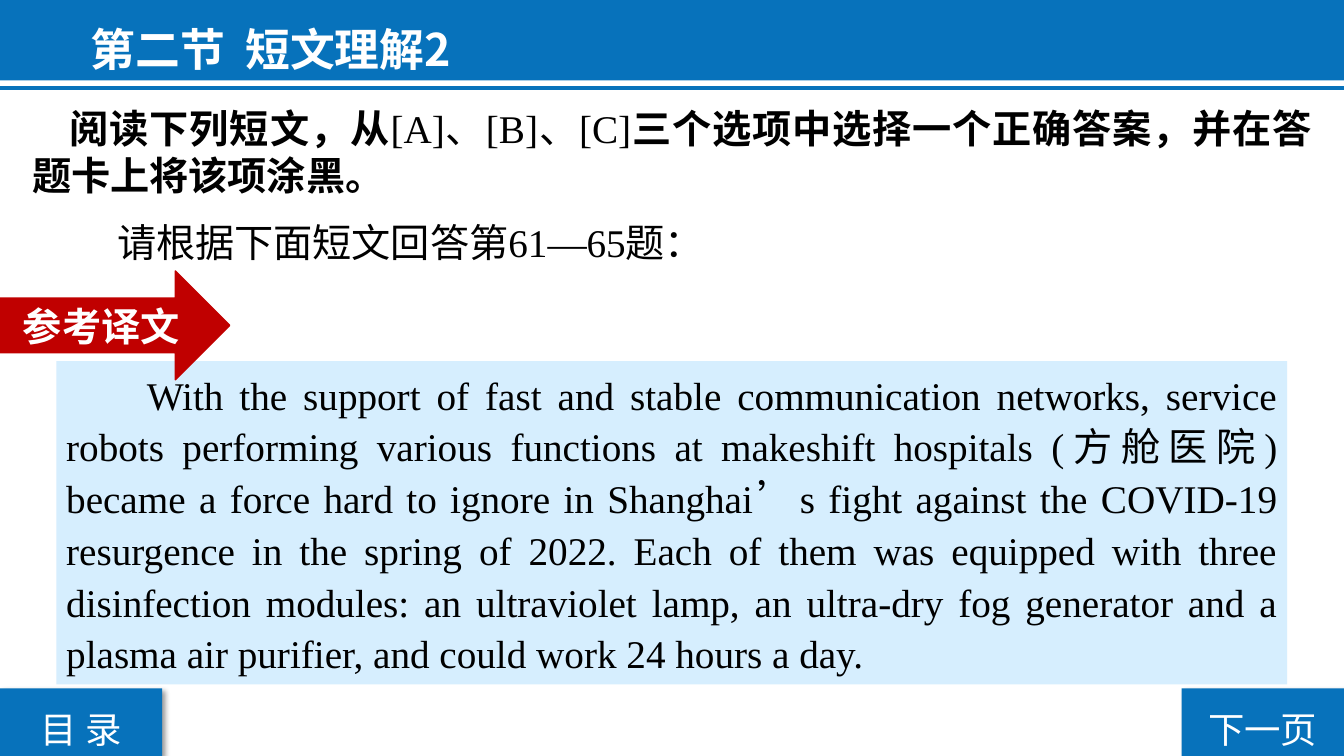
"""Builds the reading comprehension slide with its passage and navigation buttons."""
from dataclasses import dataclass

from lxml.etree import SubElement
from pptx import Presentation
from pptx.dml.color import RGBColor
from pptx.enum.shapes import MSO_CONNECTOR as Connector, MSO_SHAPE as Preset
from pptx.enum.text import MSO_ANCHOR as Anchor, PP_ALIGN as Align
from pptx.oxml.ns import qn
from pptx.util import Cm, Pt


@dataclass(frozen=True)
class Theme:
    blue: RGBColor = RGBColor(0x07, 0x72, 0xBB)
    pale: RGBColor = RGBColor(0xD6, 0xEE, 0xFE)
    red: RGBColor = RGBColor(0xC0, 0x00, 0x00)
    white: RGBColor = RGBColor(0xFF, 0xFF, 0xFF)
    black: RGBColor = RGBColor(0x00, 0x00, 0x00)
    title_size: Pt = Pt(32)
    text_size: Pt = Pt(28)
    button_size: Pt = Pt(26)
    chinese: str = "Noto Sans CJK SC"
    latin: str = "Times New Roman"


theme = Theme()


def write(box, spans, size, color, align=Align.JUSTIFY, spacing=1.0, indent=0, anchor=Anchor.TOP):
    """Fill a box with one paragraph of (text, font, bold) spans."""
    frame = box.text_frame
    frame.word_wrap = True
    frame.vertical_anchor = anchor
    frame.margin_left = frame.margin_right = Cm(0.25)
    frame.margin_top = frame.margin_bottom = Cm(0.13)
    para = frame.paragraphs[0]
    para.alignment = align
    para.line_spacing = spacing
    para.space_before = Pt(0)
    para._p.get_or_add_pPr().set("indent", str(Cm(indent)))
    for text, font, bold in spans:
        span = para.add_run()
        span.text = text
        span.font.name = font
        span.font.size = size
        span.font.bold = bold
        span.font.color.rgb = color
        SubElement(span._r.get_or_add_rPr(), qn("a:ea"), typeface=theme.chinese)


def add_block(preset, left, top, width, height, color):
    """Add a plain filled shape without outline or shadow."""
    block = page.shapes.add_shape(preset, Cm(left), Cm(top), Cm(width), Cm(height))
    block.fill.solid()
    block.fill.fore_color.rgb = color
    block.line.fill.background()
    block.shadow.inherit = False
    return block


deck = Presentation()
deck.slide_width, deck.slide_height = Cm(33.87), Cm(19.05)
page = deck.slides.add_slide(deck.slide_layouts[5])

band = add_block(Preset.RECTANGLE, 0, 0, 33.87, 2.03, theme.blue)
rule = page.shapes.add_connector(Connector.STRAIGHT, 0, Cm(2.21), Cm(33.87), Cm(2.21))
rule.line.color.rgb = theme.blue
rule.line.width = Pt(3)
SubElement(rule._element.spPr, qn("a:effectLst"))

title = page.shapes.title
title.left, title.top, title.width, title.height = Cm(2.03), Cm(0), Cm(23.16), Cm(2.03)
write(title, [("第二节  短文理解2", theme.chinese, True)], theme.title_size, theme.white,
      Align.LEFT, 1.3, anchor=Anchor.MIDDLE)
rule._element.addnext(title._element)

for label, left in (("目 录", 0), ("下一页", 29.78)):
    button = add_block(Preset.RECTANGLE, left, 17.35, 4.09, 1.7, theme.blue)
    write(button, [(label, theme.chinese, False)], theme.button_size, theme.white,
          Align.CENTER, 1.3, anchor=Anchor.MIDDLE)
    effects = button._element.spPr.find(qn("a:effectLst"))
    shadow = SubElement(effects, qn("a:outerShdw"), blurRad=str(Pt(4)), dist=str(Pt(3)),
                        dir="2700000", algn="tl", rotWithShape="0")
    shade = SubElement(shadow, qn("a:srgbClr"), val=str(theme.black))
    SubElement(shade, qn("a:alpha"), val="40000")

passage = add_block(Preset.RECTANGLE, 1.42, 9.1, 31.02, 8.15, theme.pale)
story = (
    "With the support of fast and stable communication networks, service robots performing "
    "various functions at makeshift hospitals (方舱医院) became a force hard to ignore in "
    "Shanghai’s fight against the COVID-19 resurgence in the spring of 2022. Each of them was "
    "equipped with three disinfection modules: an ultraviolet lamp, an ultra-dry fog generator "
    "and a plasma air purifier, and could work 24 hours a day."
)
write(passage, [(story, theme.latin, False)], theme.text_size, theme.black, spacing=1.1, indent=2.03)

instruction = page.shapes.add_textbox(Cm(0.56), Cm(2.49), Cm(32.77), Cm(2.64))
write(instruction, [
    ("阅读下列短文，从", theme.chinese, True),
    ("[A]、[B]、[C]", theme.latin, False),
    ("三个选项中选择一个正确答案，并在答题卡上将该项涂黑。", theme.chinese, True),
], theme.text_size, theme.black, indent=0.95)

prompt = page.shapes.add_textbox(Cm(1.8), Cm(5.38), Cm(17.96), Cm(1.45))
write(prompt, [
    ("请根据下面短文回答第", theme.chinese, False),
    ("61—65", theme.latin, False),
    ("题：", theme.chinese, False),
], theme.text_size, theme.black, indent=0.9)

arrow = add_block(Preset.RIGHT_ARROW, 0, 6.83, 5.79, 2.74, theme.red)
arrow.line.color.rgb = theme.red
arrow.line.width = Pt(1)
write(arrow, [("参考译文", theme.chinese, True)], theme.text_size, theme.white,
      Align.CENTER, anchor=Anchor.MIDDLE)

deck.save("out.pptx")
